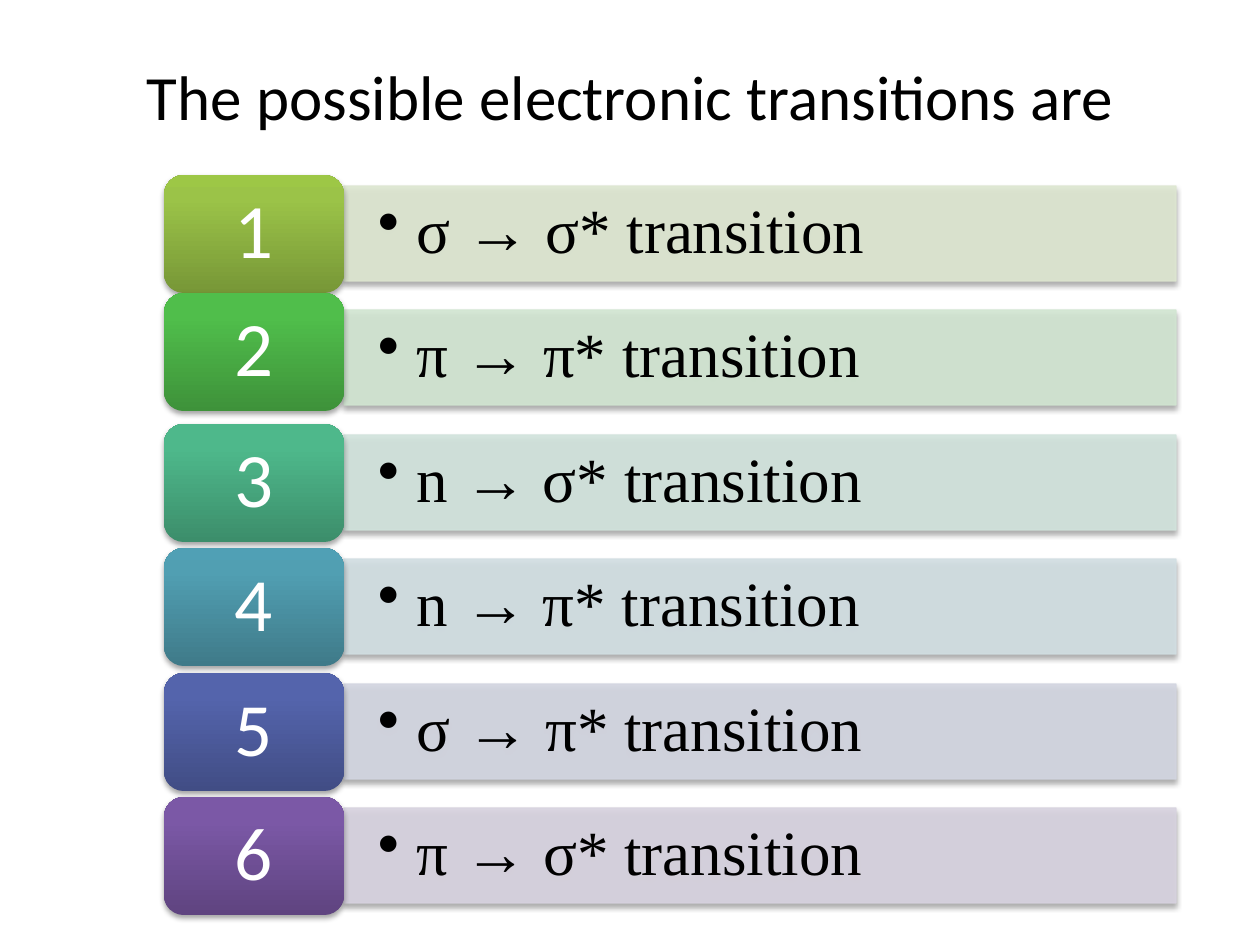
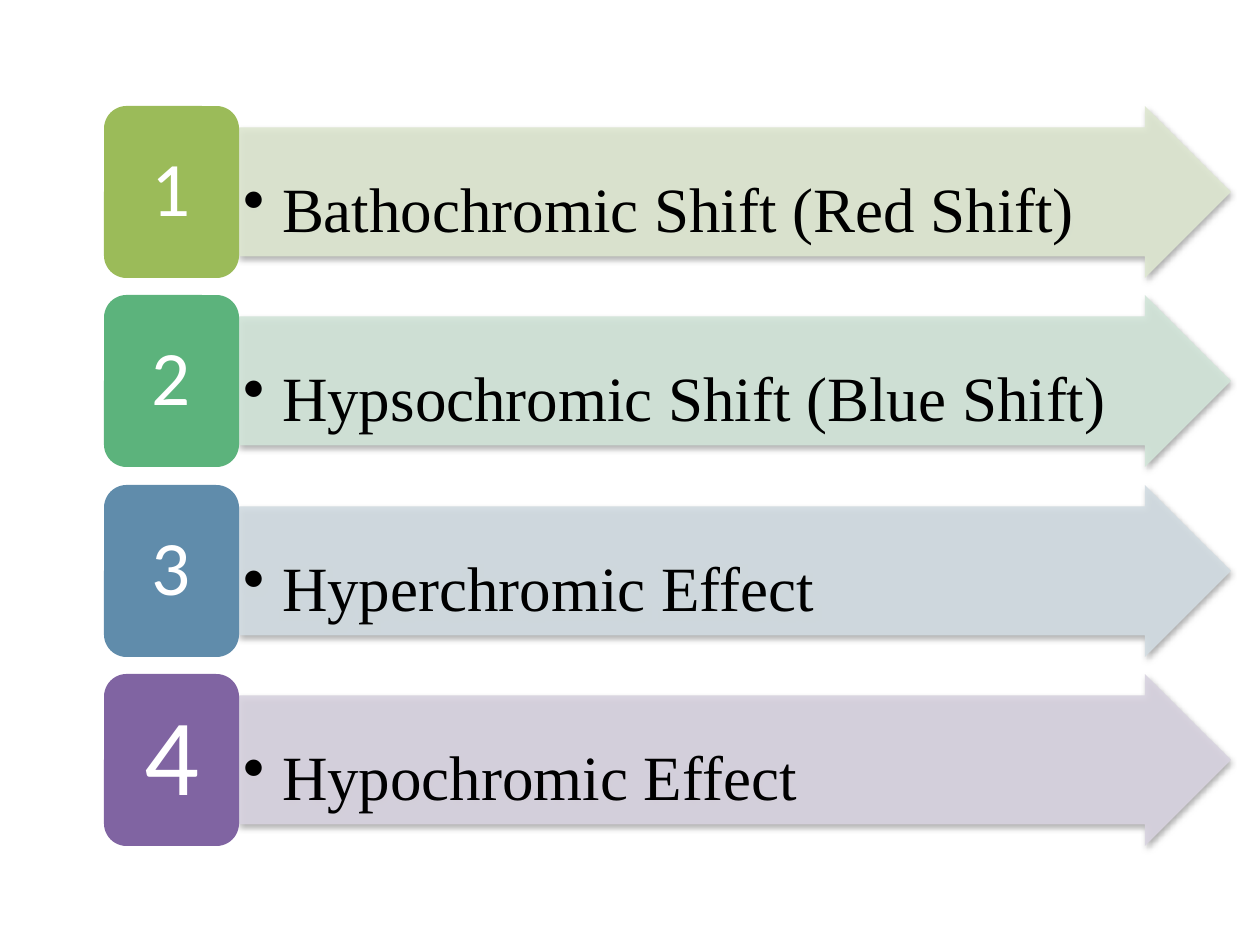
"""Build two slides of numbered bars: electronic transitions and spectral shifts."""
from lxml.etree import SubElement
from pptx import Presentation
from pptx.dml.color import RGBColor
from pptx.enum.shapes import MSO_SHAPE
from pptx.enum.text import MSO_ANCHOR, PP_ALIGN
from pptx.oxml.ns import qn
from pptx.util import Pt

PX = 914400 / 126
SERIF, SANS = "Times New Roman", "Calibri"
BLACK, WHITE = "000000", "FFFFFF"
HANGING = 39

TITLE = "The possible electronic transitions are"
TRANSITIONS = [
    ("σ → σ* transition", "DEE7D1", ("779737", "9BC348", "9DC746"), 44, 11),
    ("π → π* transition", "D2E6D2", ("3E923A", "50BE4B", "4FC149"), 44, 17),
    ("n → σ* transition", "D2E4DD", ("3C8E6B", "4EB88B", "4CBB8C"), 44, 11),
    ("n → π* transition", "D2DFE3", ("3F7A89", "519FB2", "50A0B5"), 43, 11),
    ("σ → π* transition", "D3D6E1", ("414D85", "5464AC", "5363AF"), 43, 11),
    ("π → σ* transition", "D8D3E0", ("5F4480", "7B58A6", "7C57A8"), 43, 11),
]
SHIFTS = [
    ("Bathochromic Shift (Red Shift)", "DEE7D1", "9BBB59", 44),
    ("Hypsochromic Shift (Blue Shift)", "D2E5D9", "5CB37C", 44),
    ("Hyperchromic Effect", "D2DCE2", "608CAB", 44),
    ("Hypochromic Effect", "D8D3E0", "8064A2", 62),
]


def px(value):
    return round(value * PX)


def rgb(color):
    return RGBColor.from_string(color)


def write(sp, text, size, font, color, inset, anchor=MSO_ANCHOR.MIDDLE,
          align=PP_ALIGN.LEFT, spacing=0.9, bullet=False):
    tf = sp.text_frame
    side, edge = px(inset[0]), px(inset[1])
    frame = {"word_wrap": True, "vertical_anchor": anchor, "margin_left": side,
             "margin_right": side, "margin_top": edge, "margin_bottom": edge}
    for name, value in frame.items():
        setattr(tf, name, value)
    p = tf.paragraphs[0]
    p.alignment, p.line_spacing = align, spacing
    if bullet:
        pPr = p._p.get_or_add_pPr()
        pPr.set("marL", str(px(HANGING)))
        pPr.set("indent", str(-px(HANGING)))
        SubElement(pPr, qn("a:buChar"), char="•")
    r = p.add_run()
    r.text = text
    for name, value in {"size": Pt(size), "name": font}.items():
        setattr(r.font, name, value)
    r.font.color.rgb = rgb(color)


def add_shadow(sp):
    effects = sp._element.spPr.find(qn("a:effectLst"))
    outer = SubElement(effects, qn("a:outerShdw"), blurRad="39400", dist="22900",
                       dir="5400000", rotWithShape="0")
    color = SubElement(outer, qn("a:srgbClr"), val=BLACK)
    SubElement(color, qn("a:alpha"), val="35000")


def add_box(s, kind, box):
    sp = s.shapes.add_shape(kind, *map(px, box))
    sp.shadow.inherit = False
    sp.line.fill.background()
    return sp


def add_band(s, kind, box, color, outlined=False):
    sp = add_box(s, kind, box)
    sp.fill.solid()
    sp.fill.fore_color.rgb = rgb(color)
    if outlined:
        sp.line.color.rgb = rgb(color)
        sp.line.width = Pt(0.75)
    for clr in sp._element.spPr.iter(qn("a:srgbClr")):
        SubElement(clr, qn("a:alpha"), val="90000")
    add_shadow(sp)
    return sp


def add_badge(s, box, number, size, fill):
    sp = add_box(s, MSO_SHAPE.ROUNDED_RECTANGLE, box)
    if isinstance(fill, str):
        sp.fill.solid()
        sp.fill.fore_color.rgb = rgb(fill)
    else:
        sp.fill.gradient()
        sp.fill.gradient_angle = 90
        stops = sp._element.spPr.find(qn("a:gradFill")).find(qn("a:gsLst"))
        for stop in list(stops):
            stops.remove(stop)
        for pos, color in zip((0, 80000, 100000), fill):
            stop = SubElement(stops, qn("a:gs"), pos=str(pos))
            SubElement(stop, qn("a:srgbClr"), val=color)
        add_shadow(sp)
    inset = (33, 16) if size > 44 else (23, 11)
    write(sp, str(number), size, SANS, WHITE, inset, align=PP_ALIGN.CENTER)


def build_transitions(s):
    for i, (text, color, gradient, size, lift) in enumerate(TRANSITIONS):
        top = 186 + round(i * 124.4)
        bar = add_band(s, MSO_SHAPE.RECTANGLE, (344, top, 832, 95), color, outlined=True)
        write(bar, text, 36, SERIF, BLACK, (34, 18), bullet=True)
        add_badge(s, (164, top - lift, 180, 118), i + 1, size, gradient)
    title = s.shapes.add_textbox(*map(px, (134, 16, 1113, 158)))
    write(title, TITLE, 36, SANS, BLACK, (13, 6), spacing=1.0)


def build_shifts(s):
    for i, (text, color, fill, size) in enumerate(SHIFTS):
        top = 106 + round(i * 189.4)
        arrow = add_band(s, MSO_SHAPE.RIGHT_ARROW, (239, top, 992, 172), color)
        arrow.adjustments[0], arrow.adjustments[1] = 0.75, 0.5
        write(arrow, text, 36, SERIF, BLACK, (4, 4), anchor=MSO_ANCHOR.TOP,
              spacing=1.5, bullet=True)
        add_badge(s, (104, top, 135, 172), i + 1, size, fill)


def main():
    prs = Presentation()
    prs.slide_width, prs.slide_height = px(1260), px(945)
    for build in (build_transitions, build_shifts):
        build(prs.slides.add_slide(prs.slide_layouts[6]))
    prs.save("out.pptx")


if __name__ == "__main__":
    main()
